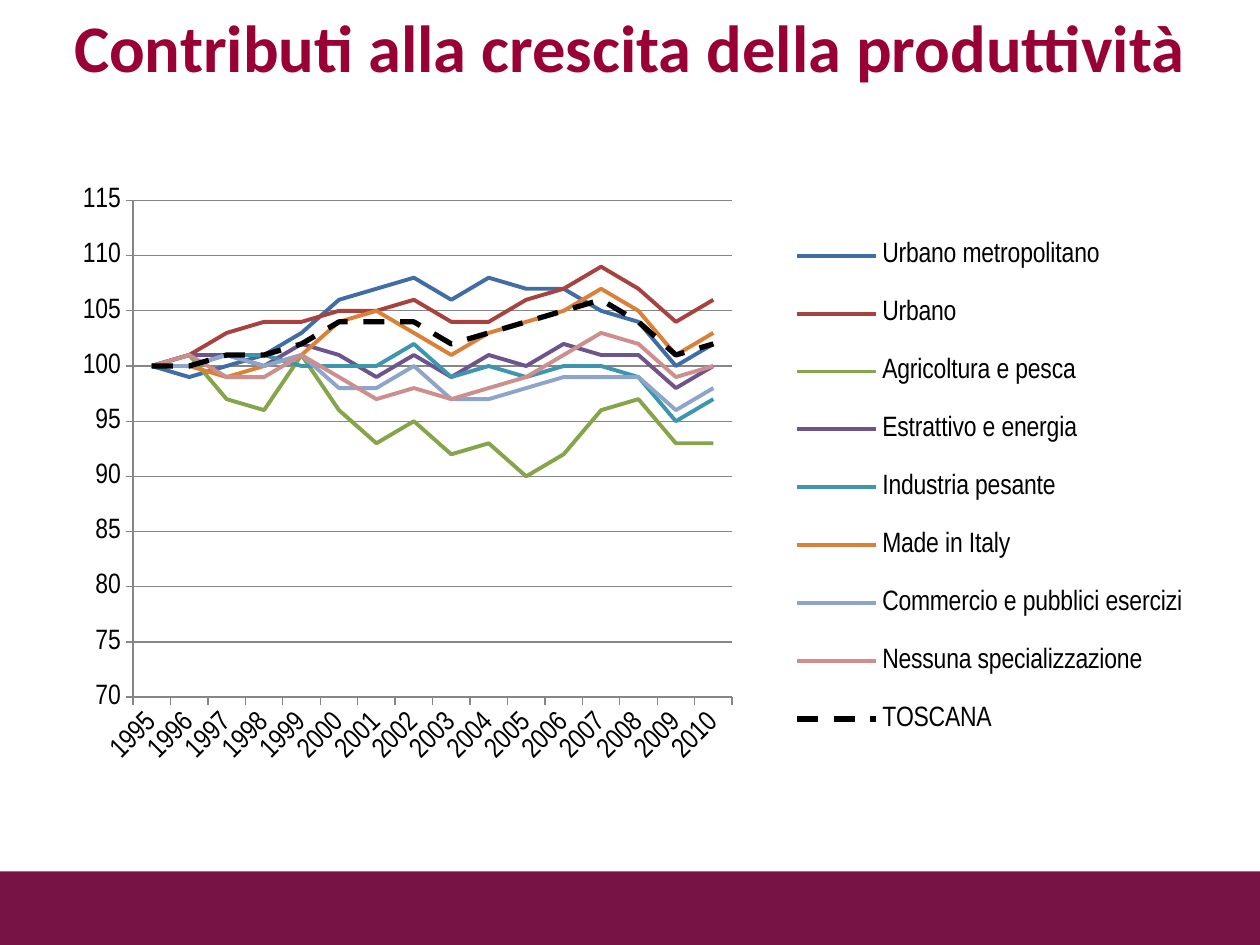
from lxml import etree
from pptx import Presentation
from pptx import util as u
from pptx.chart import data
from pptx.dml import color
from pptx.enum import chart as ch, dml, shapes, text
from pptx.oxml import ns

Pt = u.Pt
THEME = {
    "title": "990033", "band": "781445", "text": "000000", "grid": "868686",
    "title_font": "Calibri", "chart_font": "Arial Narrow",
    "title_size": 38, "chart_size": 16, "line": 2.25, "dash": 3,
}
SERIES = [
    ("Urbano metropolitano", "416DA6",
     [100, 99, 100, 101, 103, 106, 107, 108, 106, 108, 107, 107, 105, 104, 100, 102]),
    ("Urbano", "A8423F",
     [100, 101, 103, 104, 104, 105, 105, 106, 104, 104, 106, 107, 109, 107, 104, 106]),
    ("Agricoltura e pesca", "86A44A",
     [100, 101, 97, 96, 101, 96, 93, 95, 92, 93, 90, 92, 96, 97, 93, 93]),
    ("Estrattivo e energia", "6E548D",
     [100, 101, 101, 100, 102, 101, 99, 101, 99, 101, 100, 102, 101, 101, 98, 100]),
    ("Industria pesante", "3D96AE",
     [100, 100, 101, 101, 100, 100, 100, 102, 99, 100, 99, 100, 100, 99, 95, 97]),
    ("Made in Italy", "DA8137",
     [100, 100, 99, 100, 101, 104, 105, 103, 101, 103, 104, 105, 107, 105, 101, 103]),
    ("Commercio e pubblici esercizi", "8EA5CB",
     [100, 100, 101, 100, 101, 98, 98, 100, 97, 97, 98, 99, 99, 99, 96, 98]),
    ("Nessuna specializzazione", "CE8E8D",
     [100, 101, 99, 99, 101, 99, 97, 98, 97, 98, 99, 101, 103, 102, 99, 100]),
    ("TOSCANA", "000000",
     [100, 100, 101, 101, 102, 104, 104, 104, 102, 103, 104, 105, 106, 104, 101, 102]),
]


def rgb(name):
    return color.RGBColor.from_string(THEME.get(name, name))


def make_layout(x, y, w, h, inner=False):
    layout = etree.Element(ns.qn("c:layout"))
    manual = etree.SubElement(layout, ns.qn("c:manualLayout"))
    parts = [("layoutTarget", "inner")] if inner else []
    parts += [("xMode", "edge"), ("yMode", "edge"),
              ("x", x), ("y", y), ("w", w), ("h", h)]
    for tag, val in parts:
        etree.SubElement(manual, ns.qn("c:" + tag)).set("val", str(val))
    return layout


prs = Presentation()
prs.slide_width, prs.slide_height = Pt(720), Pt(540)
s = prs.slides.add_slide(prs.slide_layouts[5])

title = s.shapes.title
for name, val in {"left": 0, "top": 0, "width": 720, "height": 53.28}.items():
    setattr(title, name, Pt(val))
tf = title.text_frame
for name, val in {"word_wrap": True, "auto_size": text.MSO_AUTO_SIZE.NONE,
                  "vertical_anchor": text.MSO_ANCHOR.TOP}.items():
    setattr(tf, name, val)
p = tf.paragraphs[0]
p.alignment = text.PP_ALIGN.CENTER
r = p.add_run()
r.text = "Contributi alla crescita della produttività"
for name, val in {"name": THEME["title_font"], "size": Pt(THEME["title_size"]),
                  "bold": True}.items():
    setattr(r.font, name, val)
r.font.color.rgb = rgb("title")

cd = data.CategoryChartData()
cd.categories = [str(year) for year in range(1995, 2011)]
for name, _, values in SERIES:
    cd.add_series(name, values)
chart = s.shapes.add_chart(ch.XL_CHART_TYPE.LINE, Pt(14.4), Pt(94.32),
                           Pt(684.72), Pt(368.64), cd).chart
chart.has_title = False
chart.font.name = THEME["chart_font"]
chart.font.size = Pt(THEME["chart_size"])
chart.font.color.rgb = rgb("text")
chart.plots[0].vary_by_categories = False

for series, (name, tone, _) in zip(chart.plots[0].series, SERIES):
    total = name == "TOSCANA"
    series.smooth = False
    series.marker.style = ch.XL_MARKER_STYLE.NONE
    series.format.line.color.rgb = rgb(tone)
    series.format.line.width = Pt(THEME["dash" if total else "line"])
    if total:
        series.format.line.dash_style = dml.MSO_LINE.DASH

val_axis, cat_axis = chart.value_axis, chart.category_axis
for name, val in {"minimum_scale": 70, "maximum_scale": 115, "major_unit": 5,
                  "has_major_gridlines": True}.items():
    setattr(val_axis, name, val)
for axis in (val_axis, cat_axis):
    axis.major_tick_mark = ch.XL_TICK_MARK.OUTSIDE
    axis.minor_tick_mark = ch.XL_TICK_MARK.NONE
    axis.tick_labels.font.size = Pt(THEME["chart_size"])
for line in (val_axis.format.line, cat_axis.format.line, val_axis.major_gridlines.format.line):
    line.color.rgb = rgb("grid")
    line.width = Pt(0.75)
cat_axis._element.find(ns.qn("c:txPr")).find(ns.qn("a:bodyPr")).set("rot", "-2700000")

chart.has_legend = True
legend = chart.legend
legend.position = ch.XL_LEGEND_POSITION.RIGHT
legend.include_in_layout = False
legend.font.size = Pt(THEME["chart_size"])
boxes = [(legend._element, 1, make_layout(0.63, 0.07, 0.35, 0.86)),
         (chart._chartSpace.chart.plotArea, 0, make_layout(0.09, 0.055, 0.5, 0.77, True))]
for parent, index, layout in boxes:
    for old in parent.findall(ns.qn("c:layout")):
        parent.remove(old)
    parent.insert(index, layout)

band = s.shapes.add_shape(shapes.MSO_SHAPE.RECTANGLE, 0, Pt(498), Pt(720), Pt(42))
band.shadow.inherit = False
band.fill.solid()
band.fill.fore_color.rgb = rgb("band")
band.line.fill.background()

prs.save("out.pptx")
